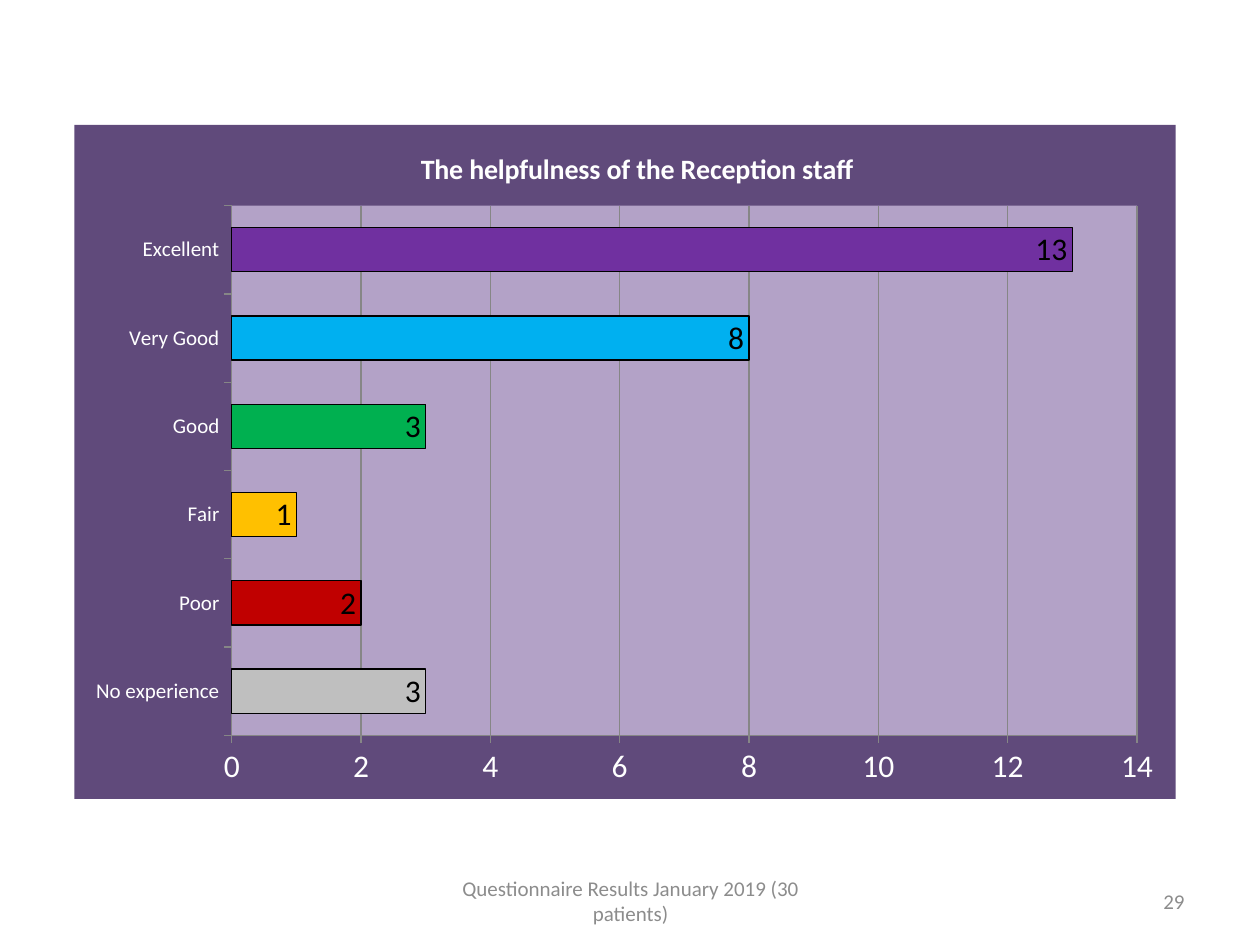
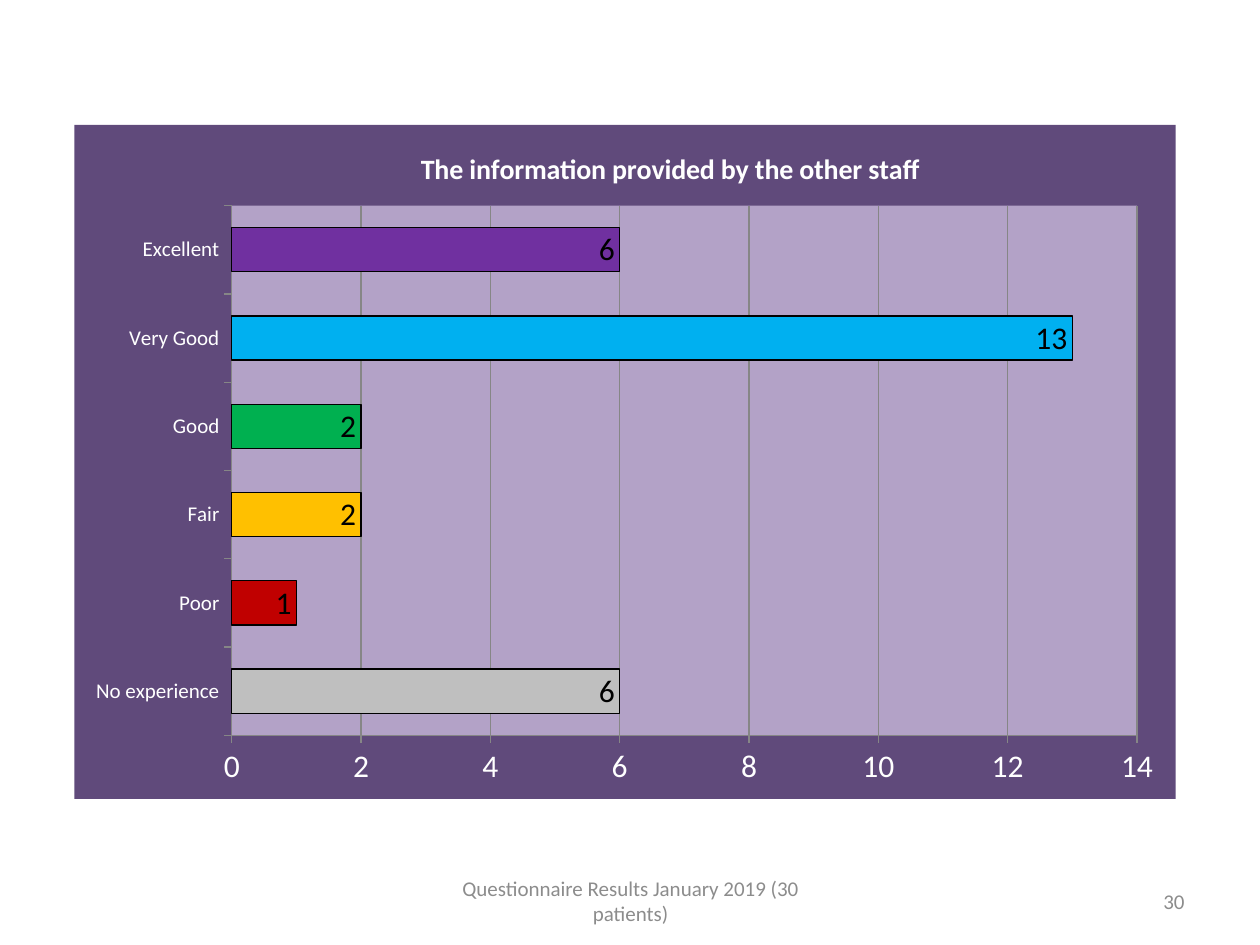
from dataclasses import dataclass

from lxml import etree
from pptx import Presentation
from pptx.chart.chart import Chart
from pptx.chart.data import CategoryChartData
from pptx.dml.color import RGBColor
from pptx.enum.chart import XL_CHART_TYPE, XL_LABEL_POSITION, XL_TICK_MARK
from pptx.enum.text import MSO_ANCHOR, PP_ALIGN
from pptx.oxml import parse_xml
from pptx.oxml.ns import nsdecls, qn
from pptx.slide import Slide
from pptx.util import Inches, Pt

BAR_CLUSTERED = XL_CHART_TYPE.BAR_CLUSTERED
INSIDE_END = XL_LABEL_POSITION.INSIDE_END
TICK_OUTSIDE, TICK_NONE = XL_TICK_MARK.OUTSIDE, XL_TICK_MARK.NONE
MIDDLE = MSO_ANCHOR.MIDDLE
CENTER, RIGHT = PP_ALIGN.CENTER, PP_ALIGN.RIGHT

FONT = "Calibri"
WHITE = RGBColor(0xFF, 0xFF, 0xFF)
BLACK = RGBColor(0x00, 0x00, 0x00)
AXIS_GRAY = RGBColor(0x86, 0x86, 0x86)
FOOTER_GRAY = RGBColor(0x8C, 0x8C, 0x8C)
PANEL_PURPLE = RGBColor(0x60, 0x4A, 0x7B)
PLOT_LILAC = RGBColor(0xB3, 0xA2, 0xC7)

RATING_COLORS = {
    "No experience": RGBColor(0xBF, 0xBF, 0xBF),
    "Poor": RGBColor(0xC0, 0x00, 0x00),
    "Fair": RGBColor(0xFF, 0xC0, 0x00),
    "Good": RGBColor(0x00, 0xB0, 0x50),
    "Very Good": RGBColor(0x00, 0xB0, 0xF0),
    "Excellent": RGBColor(0x70, 0x30, 0xA0),
}
FOOTER = "Questionnaire Results January 2019 (30 patients)"


@dataclass(frozen=True)
class Question:
    title: str
    answers: tuple[int, ...]
    page_number: int


QUESTIONS = (
    Question("The helpfulness of the Reception staff", (3, 2, 1, 3, 8, 13), 29),
    Question("The information provided by the other staff", (6, 1, 2, 2, 13, 6), 30),
)


def solid_fill(color: RGBColor) -> etree._Element:
    """Return borderless shape properties, for parts python-pptx cannot fill."""
    return parse_xml(
        f'<c:spPr {nsdecls("c", "a")}><a:solidFill><a:srgbClr val="{color}"/>'
        "</a:solidFill><a:ln><a:noFill/></a:ln></c:spPr>"
    )


def set_layout(parent: etree._Element, index: int, target: str = "", **fractions: float) -> None:
    """Place a chart part by fractions of the chart's width and height."""
    for old in parent.findall(qn("c:layout")):
        parent.remove(old)
    inner = f'<c:layoutTarget val="{target}"/>' if target else ""
    inner += "".join(f'<c:{side}Mode val="edge"/>' for side in "xy")
    inner += "".join(f'<c:{side} val="{value}"/>' for side, value in fractions.items())
    layout = f'<c:layout {nsdecls("c")}><c:manualLayout>{inner}</c:manualLayout></c:layout>'
    parent.insert(index, parse_xml(layout))


def style_title(chart: Chart, title: str) -> None:
    chart.has_title = True
    frame = chart.chart_title.text_frame
    frame.text = title
    font = frame.paragraphs[0].runs[0].font
    font.name, font.size, font.bold = FONT, Pt(16), True
    font.color.rgb = WHITE
    chart.chart_title.include_in_layout = False
    set_layout(chart.chart_title.element, 1, x=0.31, y=0.03)


def style_axes(chart: Chart) -> None:
    for axis, size in ((chart.category_axis, 12), (chart.value_axis, 18)):
        axis.major_tick_mark, axis.minor_tick_mark = TICK_OUTSIDE, TICK_NONE
        axis.format.line.color.rgb = AXIS_GRAY
        axis.format.line.width = Pt(0.75)
        font = axis.tick_labels.font
        font.name, font.size = FONT, Pt(size)
        font.color.rgb = WHITE
    values = chart.value_axis
    values.minimum_scale, values.maximum_scale, values.major_unit = 0, 14, 2
    values.has_major_gridlines = True
    values.major_gridlines.format.line.color.rgb = AXIS_GRAY
    values.major_gridlines.format.line.width = Pt(0.75)


def style_bars(chart: Chart) -> None:
    plot = chart.plots[0]
    plot.gap_width = 100
    plot.vary_by_categories = False
    series = plot.series[0]
    series.invert_if_negative = False
    for index, color in enumerate(RATING_COLORS.values()):
        bar = series.points[index].format
        bar.fill.solid()
        bar.fill.fore_color.rgb = color
        bar.line.color.rgb = BLACK
        bar.line.width = Pt(0.75)
    labels = series.data_labels
    labels.show_value = True
    labels.position = INSIDE_END
    labels.font.name, labels.font.size = FONT, Pt(18)
    labels.font.color.rgb = BLACK


def add_rating_chart(page: Slide, question: Question) -> None:
    data = CategoryChartData()
    data.categories = list(RATING_COLORS)
    data.add_series("Series 1", question.answers)
    chart = page.shapes.add_chart(
        BAR_CLUSTERED, Inches(0.59), Inches(0.99), Inches(8.74), Inches(5.35), data
    ).chart
    chart.has_legend = False
    chart.font.name, chart.font.size = FONT, Pt(18)
    style_title(chart, question.title)
    style_axes(chart)
    style_bars(chart)

    chart_body = chart.element.find(qn("c:chart"))
    chart_body.addnext(solid_fill(PANEL_PURPLE))
    plot_area = chart_body.find(qn("c:plotArea"))
    plot_area.append(solid_fill(PLOT_LILAC))
    set_layout(plot_area, 0, "inner", x=0.143, y=0.12, w=0.822, h=0.786)


def add_footer_text(page: Slide, text: str, left: float, width: float, align: PP_ALIGN) -> None:
    box = page.shapes.add_textbox(Inches(left), Inches(6.95), Inches(width), Inches(0.4))
    frame = box.text_frame
    frame.word_wrap = True
    frame.vertical_anchor = MIDDLE
    frame.text = text
    para = frame.paragraphs[0]
    para.alignment = align
    font = para.runs[0].font
    font.name, font.size = FONT, Pt(12)
    font.color.rgb = FOOTER_GRAY


def main() -> None:
    deck = Presentation()
    deck.slide_width, deck.slide_height = Inches(10), Inches(7.5)
    blank = deck.slide_layouts[6]
    for question in QUESTIONS:
        page = deck.slides.add_slide(blank)
        add_rating_chart(page, question)
        add_footer_text(page, FOOTER, 3.42, 3.17, CENTER)
        add_footer_text(page, str(question.page_number), 7.17, 2.33, RIGHT)
    deck.save("out.pptx")


if __name__ == "__main__":
    main()
